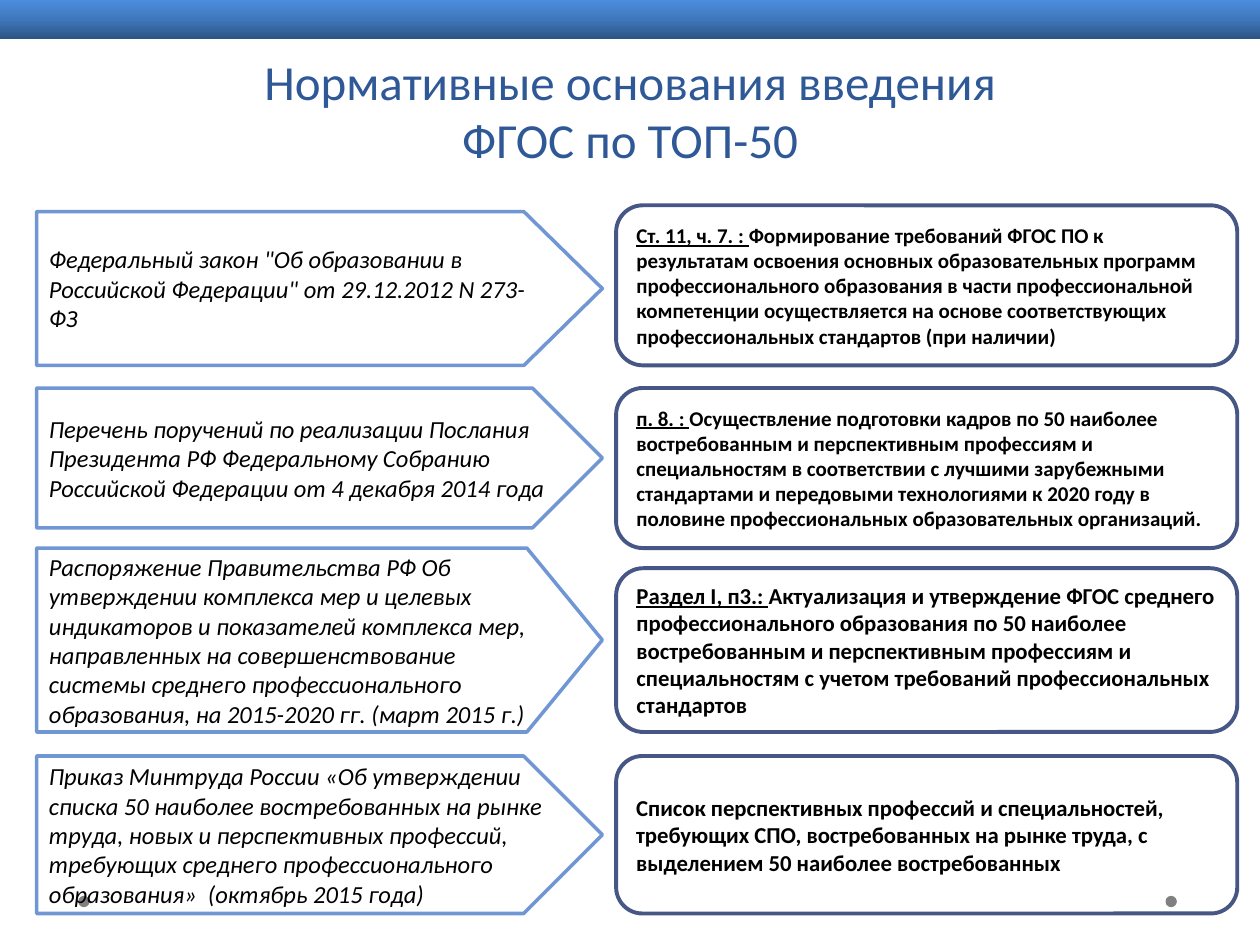
import copy

import pptx
import pptx.dml.color
import pptx.enum.shapes
import pptx.enum.text
import pptx.util
from pptx.util import Inches

SHAPE = pptx.enum.shapes.MSO_SHAPE
ANCHOR = pptx.enum.text.MSO_ANCHOR
ALIGN = pptx.enum.text.PP_ALIGN


def color(value):
    return pptx.dml.color.RGBColor.from_string(value)


def add_text(para, text, size, ink, **formats):
    span = para.add_run()
    span.text = text
    span.font.color.rgb = color(ink)
    values = {"name": "Calibri", "size": pptx.util.Pt(size), **formats}
    for name, value in values.items():
        setattr(span.font, name, value)


deck = pptx.Presentation()
deck.slide_width, deck.slide_height = Inches(10), Inches(7.5)
page = deck.slides.add_slide(deck.slide_layouts[5])

# Footer dots
for left in (9.25, 0.62):
    dot = page.shapes.add_shape(SHAPE.OVAL, Inches(left), Inches(7.11), Inches(0.09), Inches(0.09))
    dot.shadow.inherit = False
    dot.fill.solid()
    dot.fill.fore_color.rgb = color("808080")
    dot.line.fill.background()

# Title
title = page.shapes.title
title.left, title.top, title.width, title.height = map(Inches, (0.5, -0.05, 9, 1.44))
title.text_frame.vertical_anchor = ANCHOR.BOTTOM
para = title.text_frame.paragraphs[0]
para.alignment = ALIGN.CENTER
add_text(para, "Нормативные основания введения", 28, "2F5897")
para.add_line_break()
add_text(para, "ФГОС по ТОП-50", 28, "2F5897")

# Gradient bar along the top edge
bar = page.shapes.add_shape(SHAPE.RECTANGLE, 0, 0, Inches(10), Inches(0.31))
bar.shadow.inherit = False
bar.line.fill.background()
bar.fill.gradient()
bar.fill.gradient_angle = 90
first_stop = bar._element.xpath(".//a:gs")[0]
first_stop.addnext(copy.deepcopy(first_stop))
stops = ((0, "2D5484"), (0.5, "3F77BB"), (1, "4B8DDE"))
for stop, (position, value) in zip(bar.fill.gradient_stops, stops):
    stop.position = position
    stop.color.rgb = color(value)

# Rows: arrow (top, height, point ratio, text), card (top, height, size, lead, text)
rows = [
    ((1.68, 1.22, 0.51,
      "Федеральный закон \"Об образовании в Российской Федерации\" от 29.12.2012 N 273-ФЗ"),
     (1.63, 1.27, 12, "Ст. 11, ч. 7. : ",
      "Формирование требований ФГОС ПО к результатам освоения основных образовательных "
      "программ профессионального образования в части профессиональной компетенции "
      "осуществляется на основе соответствующих профессиональных стандартов (при наличии)")),
    ((3.08, 1.11, 0.5,
      "Перечень поручений по реализации Послания Президента РФ Федеральному Собранию "
      "Российской Федерации от 4 декабря 2014 года"),
     (3.08, 1.27, 12, "п. 8. : ",
      "Осуществление подготовки кадров по 50 наиболее востребованным и перспективным "
      "профессиям и специальностям в соответствии с лучшими зарубежными стандартами и "
      "передовыми технологиями к 2020 году в половине профессиональных образовательных "
      "организаций.")),
    ((4.35, 1.46, 0.41,
      "Распоряжение Правительства РФ Об утверждении комплекса мер и целевых индикаторов "
      "и показателей комплекса мер, направленных на совершенствование системы среднего "
      "профессионального образования, на 2015-2020 гг. (март 2015 г.)"),
     (4.51, 1.3, 13, "Раздел I, п3.: ",
      "Актуализация и утверждение ФГОС среднего профессионального образования по 50 "
      "наиболее востребованным и перспективным профессиям и специальностям с учетом "
      "требований профессиональных стандартов")),
    ((6, 1.25, 0.5,
      "Приказ Минтруда России «Об утверждении списка 50 наиболее востребованных на рынке "
      "труда, новых и перспективных профессий, требующих среднего профессионального "
      "образования»  (октябрь 2015 года)"),
     (6, 1.25, 13, "",
      "Список перспективных профессий и специальностей, требующих СПО, востребованных на "
      "рынке труда, с выделением 50 наиболее востребованных")),
]

for (arrow_top, arrow_height, ratio, source), (card_top, card_height, size, lead, content) in rows:
    arrow = page.shapes.add_shape(
        SHAPE.PENTAGON, Inches(0.29), Inches(arrow_top), Inches(4.49), Inches(arrow_height))
    arrow.adjustments[0] = ratio
    card = page.shapes.add_shape(
        SHAPE.ROUNDED_RECTANGLE, Inches(4.89), Inches(card_top), Inches(4.93), Inches(card_height))

    for box, outline, weight in ((arrow, "7097D3", 2), (card, "475785", 2.25)):
        box.shadow.inherit = False
        box.fill.background()
        box.line.color.rgb = color(outline)
        box.line.width = pptx.util.Pt(weight)
        box.text_frame.word_wrap = True
        box.text_frame.vertical_anchor = ANCHOR.MIDDLE
        box.text_frame.paragraphs[0].alignment = ALIGN.LEFT

    add_text(arrow.text_frame.paragraphs[0], source, 14, "000000", italic=True)
    para = card.text_frame.paragraphs[0]
    if lead:
        add_text(para, lead, size, "000000", bold=True, underline=True)
    add_text(para, content, size, "000000", bold=True)

deck.save("out.pptx")
